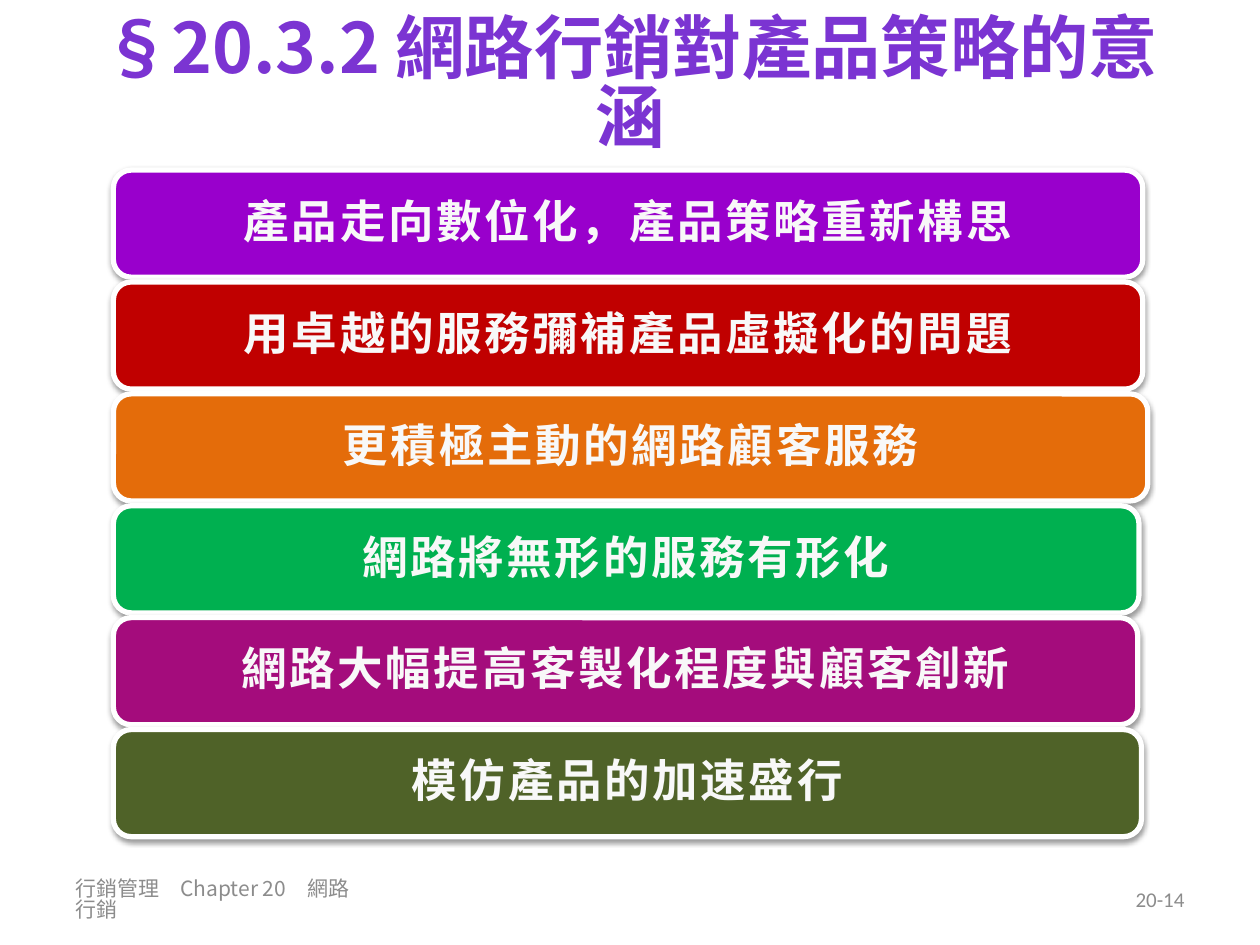
from dataclasses import dataclass

from lxml.etree import SubElement
from pptx import Presentation
from pptx.dml.color import RGBColor
from pptx.enum.shapes import MSO_SHAPE
from pptx.enum.text import MSO_ANCHOR, PP_ALIGN
from pptx.oxml.ns import qn
from pptx.util import Inches, Pt


@dataclass(frozen=True)
class Theme:
    latin: str = "Calibri"
    asian: str = "Noto Sans CJK SC"
    title_color: str = "7B34D2"
    bar_text: str = "F8F8F8"
    bar_line: str = "FFFFFF"
    footer_color: str = "8C8C8C"
    shadow_color: str = "000000"
    title_size: float = 39.6
    bar_size: float = 26
    footer_size: float = 12


class SlideBuilder:
    def __init__(self, page, theme):
        self.page = page
        self.theme = theme

    def set_text(self, box, text, align, spacing, latin, size, color, bold=False, tracking=None):
        frame = box.text_frame
        frame.word_wrap = True
        frame.vertical_anchor = MSO_ANCHOR.MIDDLE
        para = frame.paragraphs[0]
        para.alignment = align
        para.line_spacing = spacing
        span = para.add_run()
        span.text = text
        for name, value in {"name": latin, "size": Pt(size), "bold": bold}.items():
            setattr(span.font, name, value)
        span.font.color.rgb = RGBColor.from_string(color)
        properties = span.font._element
        asian = SubElement(properties, qn("a:ea"), typeface=self.theme.asian)
        properties.find(qn("a:latin")).addnext(asian)
        if tracking:
            properties.set("spc", str(int(tracking * 100)))

    def title(self, text, left, top, width, height):
        box = self.page.shapes.title
        place = {"left": left, "top": top, "width": width, "height": height}
        for name, value in place.items():
            setattr(box, name, Inches(value))
        self.set_text(box, text, PP_ALIGN.CENTER, 0.83, self.theme.asian,
                      self.theme.title_size, self.theme.title_color, bold=True)

    def footer(self, text, left, width, align, latin):
        box = self.page.shapes.add_textbox(
            Inches(left), Inches(6.95), Inches(width), Inches(0.4))
        self.set_text(box, text, align, 0.83, latin,
                      self.theme.footer_size, self.theme.footer_color)

    def bar(self, text, color, left, top, width, height):
        bar = self.page.shapes.add_shape(
            MSO_SHAPE.ROUNDED_RECTANGLE,
            Inches(left), Inches(top), Inches(width), Inches(height))
        bar.fill.solid()
        bar.fill.fore_color.rgb = RGBColor.from_string(color)
        bar.line.color.rgb = RGBColor.from_string(self.theme.bar_line)
        bar.line.width = Pt(3)
        self.drop_shadow(bar)
        self.set_text(bar, text, PP_ALIGN.CENTER, 0.9, self.theme.latin,
                      self.theme.bar_size, self.theme.bar_text, bold=True, tracking=1.5)

    def drop_shadow(self, shape):
        shape.shadow.inherit = False
        effects = shape._element.spPr.find(qn("a:effectLst"))
        shadow = SubElement(effects, qn("a:outerShdw"), blurRad=str(Pt(3.1)),
                            dist=str(Pt(1.6)), dir="5400000", rotWithShape="0")
        tint = SubElement(shadow, qn("a:srgbClr"), val=self.theme.shadow_color)
        SubElement(tint, qn("a:alpha"), val="38000")


# Bar text, fill and width
BARS = [
    ("產品走向數位化，產品策略重新構思", "9900CC", 8.17),
    ("用卓越的服務彌補產品虛擬化的問題", "C00000", 8.17),
    ("更積極主動的網路顧客服務", "E46C0A", 8.21),
    ("網路將無形的服務有形化", "00B050", 8.14),
    ("網路大幅提高客製化程度與顧客創新", "A40C7C", 8.13),
    ("模仿產品的加速盛行", "4F6228", 8.16),
]
BAR_LEFT, BAR_TOP, BAR_HEIGHT = 0.9, 1.35, 0.85
LAST_BAR_TOP = 5.79


def main():
    deck = Presentation()
    deck.slide_width, deck.slide_height = Inches(10), Inches(7.5)
    theme = Theme()
    builder = SlideBuilder(deck.slides.add_slide(deck.slide_layouts[5]), theme)

    # Title
    builder.title("§20.3.2 網路行銷對產品策略的意涵", 0.5, 0, 9, 1.39)

    # Footer and page number
    builder.footer("行銷管理　Chapter 20　網路行銷", 0.5, 2.45, PP_ALIGN.LEFT, theme.asian)
    builder.footer("20-14", 7.17, 2.33, PP_ALIGN.RIGHT, theme.latin)

    # Evenly stacked bars
    step = (LAST_BAR_TOP - BAR_TOP) / (len(BARS) - 1)
    for row, (text, color, width) in enumerate(BARS):
        builder.bar(text, color, BAR_LEFT, BAR_TOP + row * step, width, BAR_HEIGHT)

    deck.save("out.pptx")


if __name__ == "__main__":
    main()
